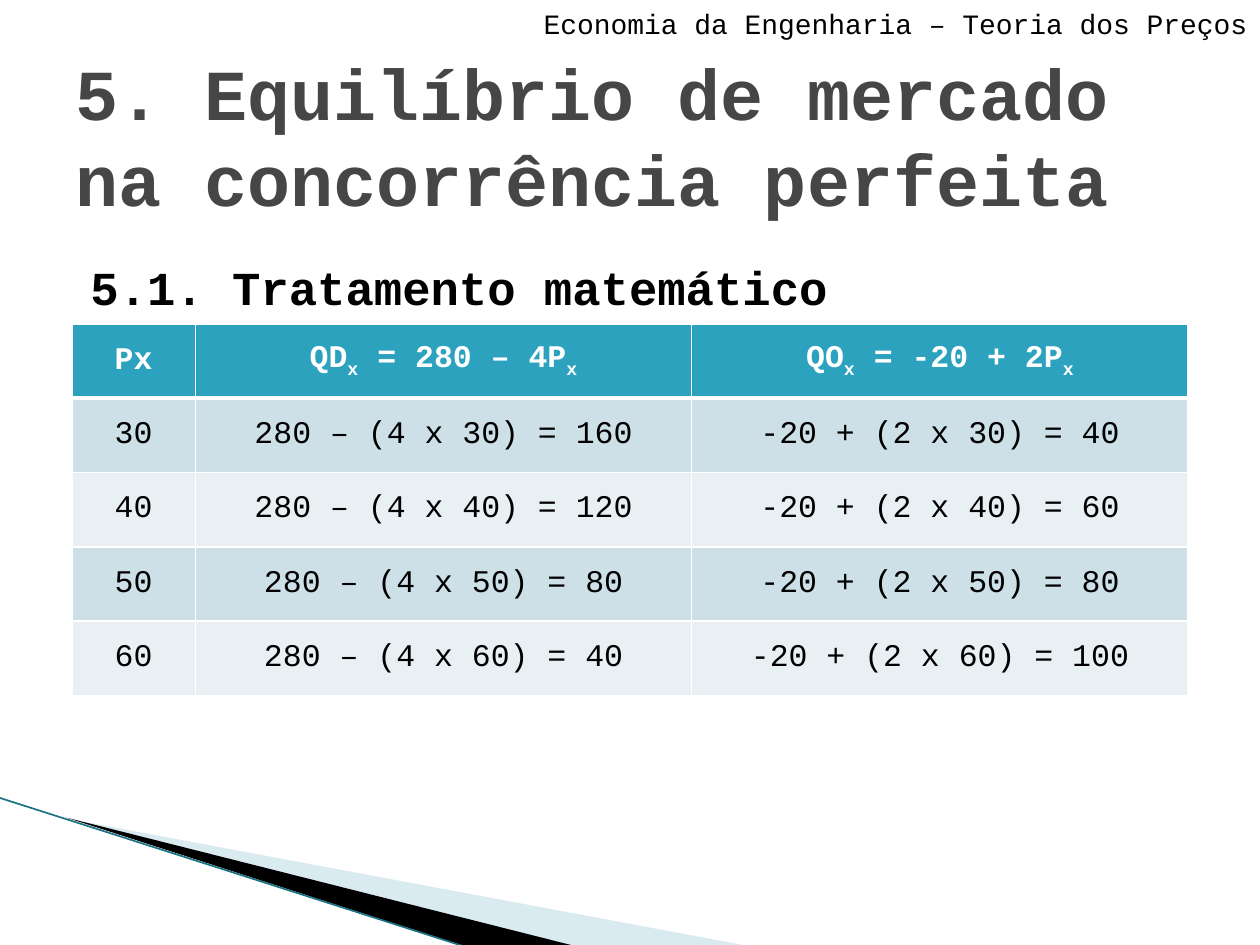
from lxml.etree import SubElement
from pptx import Presentation
from pptx.dml.color import RGBColor
from pptx.enum.shapes import MSO_CONNECTOR as Connector
from pptx.enum.text import MSO_ANCHOR as Anchor, PP_ALIGN as Align
from pptx.oxml.ns import qn
from pptx.util import Inches, Pt

HEADER = "Economia da Engenharia – Teoria dos Preços"
TITLE = "5. Equilíbrio de mercado na concorrência perfeita"
SUBTITLE = "5.1. Tratamento matemático"
SUB = "x"
HEADINGS = [
    [("Px", False)],
    [("QD", False), (SUB, True), (" = 280 – 4P", False), (SUB, True)],
    [("QO", False), (SUB, True), (" = -20 + 2P", False), (SUB, True)],
]
ROWS = [
    ("30", "280 – (4 x 30) = 160", "-20 + (2 x 30) = 40"),
    ("40", "280 – (4 x 40) = 120", "-20 + (2 x 40) = 60"),
    ("50", "280 – (4 x 50) = 80", "-20 + (2 x 50) = 80"),
    ("60", "280 – (4 x 60) = 40", "-20 + (2 x 60) = 100"),
]
WEDGES = [
    ("pale", 40, [(0.55, 6.5), (5.95, 7.51), (4.56, 7.51)]),
    ("black", 100, [(0.53, 6.49), (4.57, 7.51), (3.72, 7.52)]),
]
EDGE = [(-0.01, 6.33), (3.71, 7.52)]
TABLE_AT = (0.57, 2.57)
COLUMNS = (0.98, 3.94, 3.94)
ROW_HEIGHT = 0.59
THEME = {
    "font": "Courier New",
    "size": {"title": 41, "subtitle": 27, "table": 18, "header": 16},
    "color": {
        "title": "464646", "black": "000000", "white": "FFFFFF",
        "heading": "2DA2BF", "odd": "CDE0E8", "even": "E8F0F4",
        "pale": "A0CBDC", "edge": "1A7286",
    },
}


def color(name):
    return RGBColor.from_string(THEME["color"][name])


def add_span(para, text, size, ink, bold=False, lowered=False):
    span = para.add_run()
    span.text = text
    font = span.font
    font.name = THEME["font"]
    font.size = Pt(THEME["size"][size])
    font.bold = bold
    font.color.rgb = color(ink)
    if lowered:
        font._element.set("baseline", "-25000")


def add_text(page, area, text, size, ink, bold=False, align=Align.LEFT,
             anchor=Anchor.TOP, indent=0):
    box = page.shapes.add_textbox(*map(Inches, area))
    frame = box.text_frame
    frame.word_wrap = True
    frame.vertical_anchor = anchor
    para = frame.paragraphs[0]
    para.alignment = align
    if indent:
        para._p.get_or_add_pPr().set("marL", str(Inches(indent)))
    add_span(para, text, size, ink, bold)


def add_wedge(page, fill, opacity, corners):
    points = [tuple(map(Inches, corner)) for corner in corners]
    builder = page.shapes.build_freeform(*points[0], scale=1.0)
    builder.add_line_segments(points[1:], close=True)
    wedge = builder.convert_to_shape()
    wedge.shadow.inherit = False
    wedge.line.fill.background()
    wedge.fill.solid()
    wedge.fill.fore_color.rgb = color(fill)
    if opacity < 100:
        tint = wedge._element.spPr.find(f".//{qn('a:srgbClr')}")
        SubElement(tint, qn("a:alpha"), val=str(opacity * 1000))


def add_edge(page):
    start, end = EDGE
    edge = page.shapes.add_connector(
        Connector.STRAIGHT, *map(Inches, start + end))
    edge.line.color.rgb = color("edge")
    edge.line.width = Pt(0.95)
    SubElement(edge._element.spPr, qn("a:effectLst"))


def style_cell(cell, fill, bottom):
    cell.vertical_anchor = Anchor.MIDDLE
    properties = cell._tc.get_or_add_tcPr()
    for side, width in (("L", 1), ("R", 1), ("T", 1), ("B", bottom)):
        border = SubElement(properties, qn(f"a:ln{side}"), w=str(Pt(width)))
        solid = SubElement(border, qn("a:solidFill"))
        SubElement(solid, qn("a:srgbClr"), val=THEME["color"]["white"])
    cell.fill.solid()
    cell.fill.fore_color.rgb = color(fill)


def add_market_table(page):
    content = [HEADINGS] + [[[(text, False)] for text in row] for row in ROWS]
    area = (*TABLE_AT, sum(COLUMNS), ROW_HEIGHT * len(content))
    table = page.shapes.add_table(
        len(content), len(COLUMNS), *map(Inches, area)).table
    for column, width in zip(table.columns, COLUMNS):
        column.width = Inches(width)
    for r, row in enumerate(content):
        heading = r == 0
        fill = "heading" if heading else ("odd" if r % 2 else "even")
        table.rows[r].height = Inches(ROW_HEIGHT)
        for c, spans in enumerate(row):
            cell = table.cell(r, c)
            top_border = 3 if r == 1 else 1
            style_cell(cell, fill, 3 if heading else 1)
            if top_border > 1:
                cell._tc.tcPr.find(qn("a:lnT")).set("w", str(Pt(top_border)))
            para = cell.text_frame.paragraphs[0]
            para.alignment = Align.CENTER
            for text, lowered in spans:
                add_span(para, text, "table", "white" if heading else "black",
                         heading, lowered)


def main():
    deck = Presentation()
    deck.slide_width, deck.slide_height = Inches(10), Inches(7.5)
    page = deck.slides.add_slide(deck.slide_layouts[6])
    for wedge in WEDGES:
        add_wedge(page, *wedge)
    add_edge(page)
    add_market_table(page)
    add_text(page, (0.5, 0.3, 9, 1.54), TITLE, "title", "title",
             bold=True, anchor=Anchor.MIDDLE)
    add_text(page, (0.5, 2, 9, 0.55), SUBTITLE, "subtitle", "black",
             bold=True, indent=0.12)
    add_text(page, (0, 0, 10, 0.35), HEADER, "header", "black",
             align=Align.RIGHT)
    deck.save("out.pptx")


if __name__ == "__main__":
    main()
